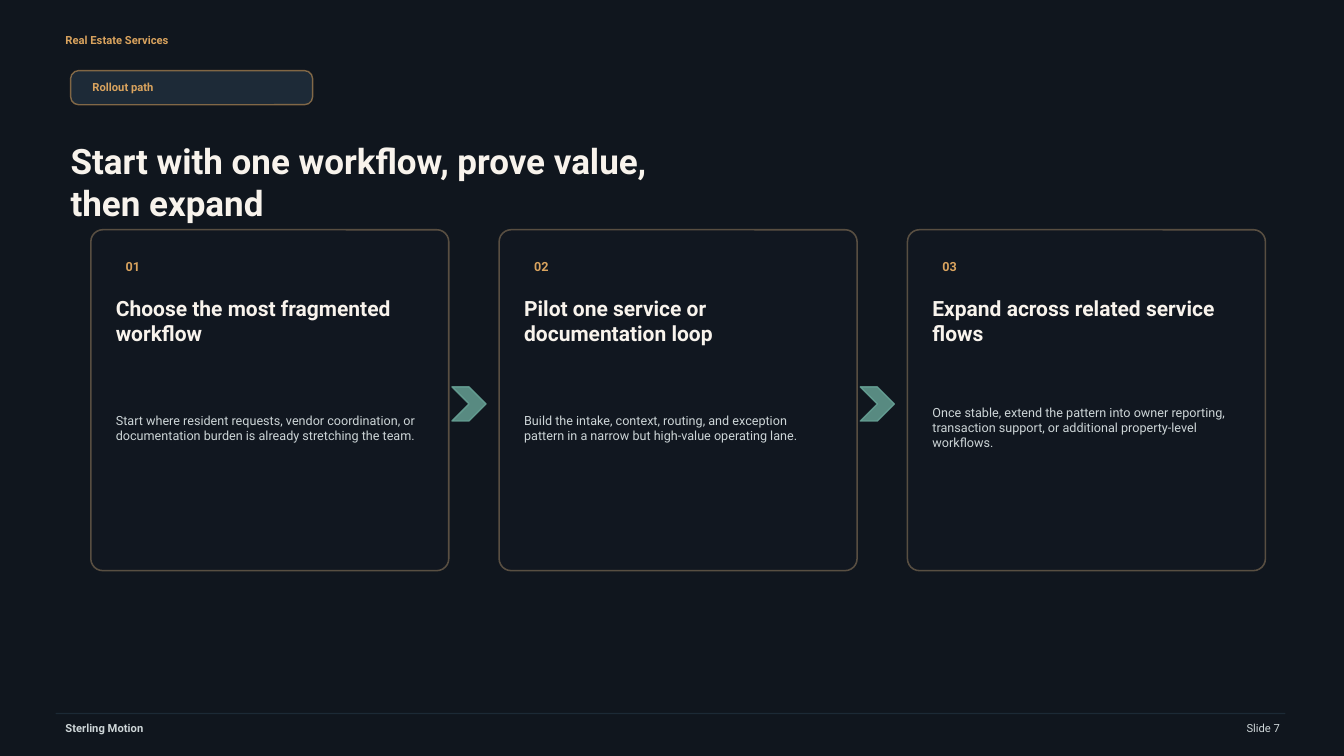
import pptx
import pptx.util
import pptx.dml.color
import pptx.enum.shapes
import pptx.enum.text
import pptx.oxml
import pptx.oxml.ns

Cm = pptx.util.Cm
Pt = pptx.util.Pt
RGBColor = pptx.dml.color.RGBColor
MSO_SHAPE = pptx.enum.shapes.MSO_SHAPE
PP_ALIGN = pptx.enum.text.PP_ALIGN

SECTION = "Real Estate Services"
TAG = "Rollout path"
TITLE = "Start with one workflow, prove value, then expand"
STEPS = [
    ("Choose the most fragmented workflow",
     "Start where resident requests, vendor coordination, or documentation "
     "burden is already stretching the team."),
    ("Pilot one service or documentation loop",
     "Build the intake, context, routing, and exception pattern in a narrow "
     "but high-value operating lane."),
    ("Expand across related service flows",
     "Once stable, extend the pattern into owner reporting, transaction "
     "support, or additional property-level workflows."),
]
BRAND = "Sterling Motion"
PAGE = "Slide 7"

NIGHT = RGBColor(0x10, 0x16, 0x1E)
SLATE = RGBColor(0x20, 0x2F, 0x3D)
PANEL = RGBColor(0x1A, 0x24, 0x30)
GOLD = RGBColor(0xD9, 0xA3, 0x5E)
SAND = RGBColor(0xED, 0xC3, 0x8A)
TEAL = RGBColor(0x6A, 0xA7, 0x9A)
IVORY = RGBColor(0xF8, 0xF3, 0xEC)
MIST = RGBColor(0xCD, 0xD5, 0xD7)

LABEL = {"size": Pt(8), "bold": True}
NUMBER = {"size": Pt(9), "bold": True}
HEADING = {"size": Pt(15), "bold": True}
BODY = {"size": Pt(9), "bold": False}
HEADLINE = {"size": Pt(25), "bold": True}
FOOTER = {"size": Pt(8), "bold": False}

CARD_X, CARD_Y, CARD_W, CARD_H = 2.29, 5.79, 9.02, 8.59
PITCH = 10.29
INSET = 0.63
CHEVRON = 0.86
CHEVRON_GAP = 0.08

prs = pptx.Presentation()
prs.slide_width, prs.slide_height = Cm(33.87), Cm(19.05)
s = prs.slides.add_slide(prs.slide_layouts[6])
s.background.fill.solid()
s.background.fill.fore_color.rgb = NIGHT


def set_alpha(fill, percent):
    color = fill._xPr.find(".//" + pptx.oxml.ns.qn("a:srgbClr"))
    color.append(pptx.oxml.parse_xml(
        f'<a:alpha {pptx.oxml.ns.nsdecls("a")} val="{percent * 1000}"/>'))


def set_line(line, color, width, alpha):
    line.width = Pt(width)
    line.fill.solid()
    line.fill.fore_color.rgb = color
    set_alpha(line.fill, alpha)


def add_panel(kind, box, fill, fill_alpha, color, width, alpha, radius=None):
    sp = s.shapes.add_shape(kind, *map(Cm, box))
    sp.shadow.inherit = False
    if radius is not None:
        sp.adjustments[0] = radius
    sp.fill.solid()
    sp.fill.fore_color.rgb = fill
    set_alpha(sp.fill, fill_alpha)
    set_line(sp.line, color, width, alpha)


def add_text(text, box, style, color, flush=False, align=PP_ALIGN.LEFT):
    tf = s.shapes.add_textbox(*map(Cm, box)).text_frame
    frame = {"word_wrap": True, "vertical_anchor": pptx.enum.text.MSO_ANCHOR.MIDDLE}
    if flush:
        frame.update(margin_left=0, margin_right=0, margin_top=0, margin_bottom=0)
    for name, value in frame.items():
        setattr(tf, name, value)
    p = tf.paragraphs[0]
    p.alignment = align
    r = p.add_run()
    r.text = text
    for name, value in {"name": "Roboto", **style}.items():
        setattr(r.font, name, value)
    r.font.color.rgb = color


add_text(SECTION, (1.4, 0.76, 8.13, 0.51), LABEL, GOLD)
add_panel(MSO_SHAPE.ROUNDED_RECTANGLE, (1.78, 1.78, 6.1, 0.86),
          SLATE, 82, GOLD, 1, 55, 0.235)
add_text(TAG, (2.08, 1.98, 5.49, 0.41), LABEL, GOLD)
add_text(TITLE, (1.78, 2.67, 15.49, 3.81), HEADLINE, IVORY, flush=True)

for i, (heading, body) in enumerate(STEPS):
    x = CARD_X + i * PITCH
    text_x = x + INSET
    add_panel(MSO_SHAPE.ROUNDED_RECTANGLE, (x, CARD_Y, CARD_W, CARD_H),
              PANEL, 12, SAND, 1.1, 32, 0.035)
    add_text(f"{i + 1:02}", (text_x, 6.48, 1.27, 0.46), NUMBER, GOLD)
    add_text(heading, (text_x, 7.37, 7.37, 1.4), HEADING, IVORY, flush=True)
    add_text(body, (text_x, 9.19, 7.62, 3.18), BODY, MIST, flush=True)
    if i < len(STEPS) - 1:
        add_panel(MSO_SHAPE.CHEVRON,
                  (x + CARD_W + CHEVRON_GAP, 9.75, CHEVRON, CHEVRON),
                  TEAL, 80, TEAL, 1, 80)

rule = s.shapes.add_connector(pptx.enum.shapes.MSO_CONNECTOR.STRAIGHT,
                              Cm(1.4), Cm(17.98), Cm(32.39), Cm(17.98))
set_line(rule.line, SLATE, 1, 80)
rule._element.spPr.append(pptx.oxml.parse_xml(
    f'<a:effectLst {pptx.oxml.ns.nsdecls("a")}/>'))
add_text(BRAND, (1.4, 18.08, 5.59, 0.51), LABEL, MIST)
add_text(PAGE, (26.67, 18.08, 5.84, 0.51), FOOTER, MIST, align=PP_ALIGN.RIGHT)

prs.save("out.pptx")
